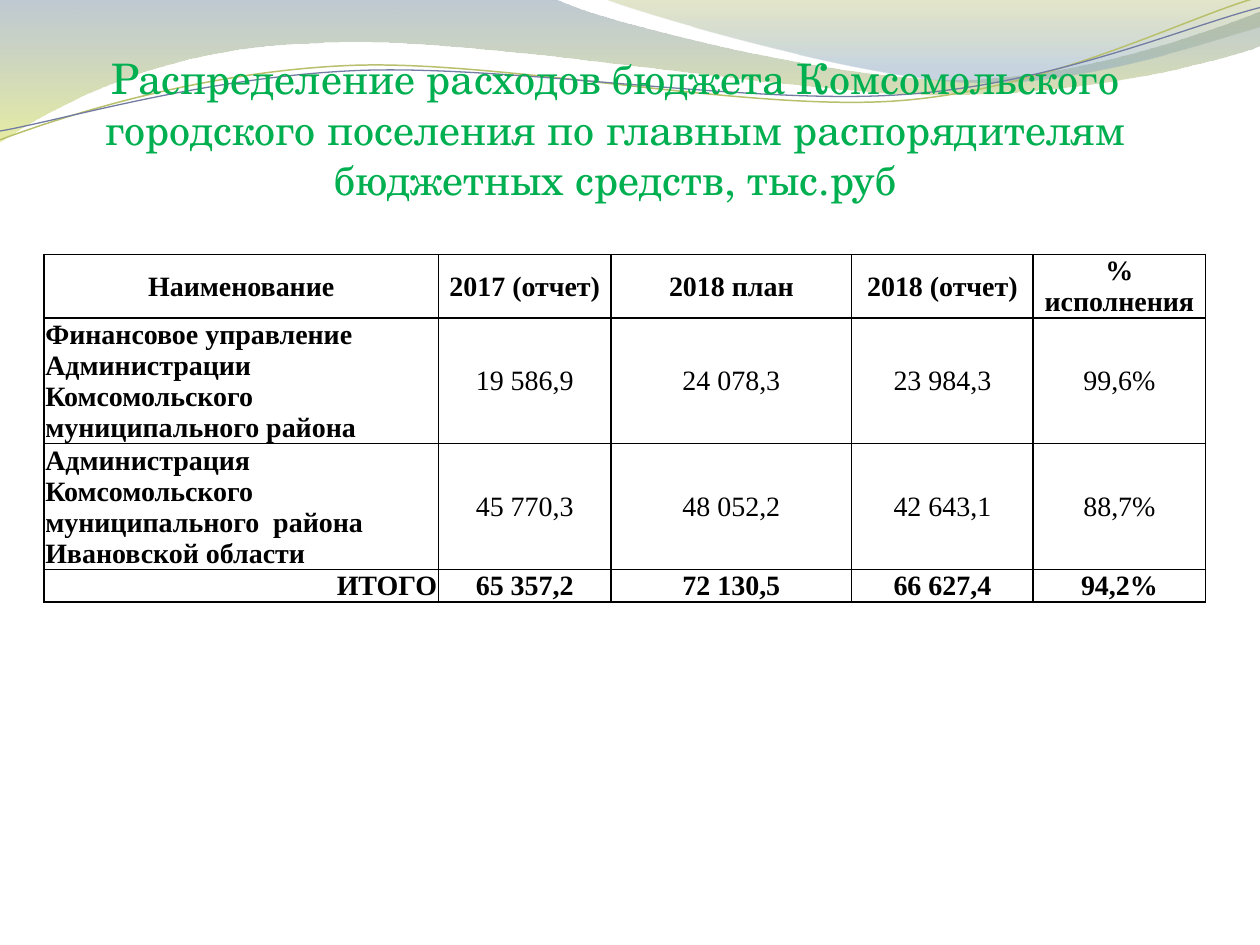
"""Builds a slide with a budget spending table under a wave-shaped header."""
from math import cos, radians, sin

from lxml import etree
from pptx import Presentation
from pptx.dml.color import RGBColor
from pptx.enum.text import MSO_ANCHOR, MSO_AUTO_SIZE, PP_ALIGN
from pptx.oxml import parse_xml
from pptx.util import Inches, Pt

TOP, MIDDLE, BOTTOM = MSO_ANCHOR.TOP, MSO_ANCHOR.MIDDLE, MSO_ANCHOR.BOTTOM
LEFT, CENTER, RIGHT = PP_ALIGN.LEFT, PP_ALIGN.CENTER, PP_ALIGN.RIGHT
NS = 'xmlns:a="http://schemas.openxmlformats.org/drawingml/2006/main"'
TILT = 2.7
PIVOT_X, PIVOT_Y = 4.99, 0.58


def rgb(value):
    return RGBColor.from_string(value)


def trace(shapes, segments, closed, tilt=0):
    """Draws a path of points and Bezier triples, turned back by its tilt."""
    c, d = cos(radians(tilt)), sin(radians(tilt))
    path = []
    for seg in segments:
        offsets = [(x - PIVOT_X, y - PIVOT_Y) for x, y in zip(seg[::2], seg[1::2])]
        path.append([(Inches(PIVOT_X + x * c - y * d), Inches(PIVOT_Y + x * d + y * c))
                     for x, y in offsets])
    builder = shapes.build_freeform(*path[0][0])
    builder.add_line_segments([points[-1] for points in path[1:]], close=closed)
    sp = builder.convert_to_shape()
    lines = sp._element.xpath(".//a:lnTo")
    for line, points in zip(lines, path[1:]):
        if len(points) == 3:
            pts = "".join(f'<a:pt x="{x - sp.left}" y="{y - sp.top}"/>' for x, y in points)
            curve = parse_xml(f'<a:cubicBezTo {NS}>{pts}</a:cubicBezTo>')
            line.getparent().replace(line, curve)
    sp.rotation = -tilt
    sp.shadow.inherit = False
    return sp


prs = Presentation()
prs.slide_width, prs.slide_height = Inches(10), Inches(7.5)
s = prs.slides.add_slide(prs.slide_layouts[5])

bands = [
    ([(0, 0), (4.4, -0.01), (4.76, 0.17, 6.64, 0.63, 7.58, 0.63),
      (8.53, 0.63, 9.58, 0.26, 10, 0.09), (10.01, 0.36),
      (9.83, 0.44, 8.7, 0.76, 7.46, 0.75), (6.22, 0.75, 3.82, 0.28, 2.57, 0.34),
      (1.29, 0.36, 0.46, 0.83, -0.01, 1.13), (0, 0)],
     [(0, "72889B", 45), (100, "D3DE57", 55)]),
    ([(4.79, -0.01), (5.09, 0.11, 6.82, 0.62, 7.69, 0.65),
      (8.56, 0.69, 9.61, 0.32, 10, 0.21), (10, 0), (4.79, -0.01)],
     [(0, "A4AC50", 30), (80, "84A3BD", 45)]),
]
for segments, stops in bands:
    sp = trace(s.shapes, segments, True)
    sp.line.fill.background()
    sp.fill.gradient()
    sp.fill.gradient_angle = 270
    gs_list = sp.fill._fill._gradFill.gsLst
    for gs in list(gs_list):
        gs_list.remove(gs)
    for position, color, alpha in stops:
        gs_list.append(parse_xml(
            f'<a:gs {NS} pos="{position * 1000}"><a:srgbClr val="{color}">'
            f'<a:alpha val="{alpha * 1000}"/></a:srgbClr></a:gs>'))

waves = [
    ([(0, 1.11), (0.48, 0.93, 1.58, 0.57, 2.77, 0.52), (3.95, 0.47, 5.93, 0.89, 7.13, 0.8),
      (8.33, 0.71, 9.38, 0.15, 9.98, -0.02)], "B9C06C", 0.85),
    ([(0, 1.04), (0.47, 0.96, 1.64, 0.61, 2.83, 0.56), (4.03, 0.51, 5.97, 0.84, 7.17, 0.75),
      (8.36, 0.67, 9.41, 0.21, 10, 0.06)], "727CA3", 0.75),
]
for segments, color, width in waves:
    sp = trace(s.shapes, segments, False, TILT)
    sp.fill.background()
    sp.line.color.rgb = rgb(color)
    sp.line.width = Pt(width)

title = s.shapes.title
s.shapes._spTree.append(title._element)
title.left, title.top, title.width, title.height = (Inches(v) for v in (0.12, 0.44, 9.53, 1.18))
tf = title.text_frame
tf.text = ("Распределение расходов бюджета Комсомольского городского поселения "
           "по главным распорядителям бюджетных средств, тыс.руб")
tf.word_wrap = True
tf.auto_size = MSO_AUTO_SIZE.NONE
tf.vertical_anchor = BOTTOM
tf.margin_left = tf.margin_right = tf.margin_bottom = 0
tf.margin_top = Inches(0.05)
p = tf.paragraphs[0]
p.alignment = CENTER
r = p.runs[0]
r.font.size = Pt(24)
r.font.name = "TeX Gyre Schola"
r.font.color.rgb = rgb("00B050")
r.font._element.insert(0, parse_xml(
    f'<a:ln {NS} w="9525"><a:solidFill><a:srgbClr val="8B8B9D"/></a:solidFill></a:ln>'))

rows = [
    ["Наименование", "2017 (отчет)", "2018 план", "2018 (отчет)", "% исполнения"],
    ["Финансовое управление Администрации Комсомольского муниципального района",
     "19 586,9", "24 078,3", "23 984,3", "99,6%"],
    ["Администрация Комсомольского муниципального  района Ивановской области",
     "45 770,3", "48 052,2", "42 643,1", "88,7%"],
    ["ИТОГО", "65 357,2", "72 130,5", "66 627,4", "94,2%"],
]
col_widths = [3.13, 1.37, 1.91, 1.44, 1.37]
row_heights = [0.31, 0.77, 0.62, 0.15]
first_col_align = [CENTER, LEFT, LEFT, RIGHT]
anchors = {(1, 0): TOP, (3, 0): TOP, (3, 1): TOP, (3, 2): BOTTOM, (3, 3): TOP}

frame = s.shapes.add_table(len(rows), len(col_widths), Inches(0.35), Inches(2.02),
                           Inches(9.21), Inches(2.96))
table = frame.table
table.first_row = table.horz_banding = False
for col, width in zip(table.columns, col_widths):
    col.width = Inches(width)
for i, values in enumerate(rows):
    table.rows[i].height = Inches(row_heights[i])
    for j, value in enumerate(values):
        cell = table.cell(i, j)
        cell.text = value
        cell.margin_left = cell.margin_right = cell.margin_top = Inches(0.01)
        cell.margin_bottom = 0
        cell.vertical_anchor = anchors.get((i, j), MIDDLE)
        p = cell.text_frame.paragraphs[0]
        p.alignment = first_col_align[i] if j == 0 else CENTER
        r = p.runs[0]
        r.font.size = Pt(16)
        r.font.name = "Times New Roman"
        r.font.bold = j == 0 or i in (0, len(rows) - 1)
        r.font.color.rgb = rgb("000000")
        tc_pr = cell._tc.get_or_add_tcPr()
        for side in ("lnL", "lnR", "lnT", "lnB"):
            tc_pr.append(etree.fromstring(
                f'<a:{side} {NS} w="12700"><a:solidFill><a:srgbClr val="000000"/>'
                f'</a:solidFill></a:{side}>'))
        cell.fill.solid()
        cell.fill.fore_color.rgb = rgb("FFFFFF")
frame.width, frame.height = Inches(9.21), Inches(2.96)

prs.save("out.pptx")
